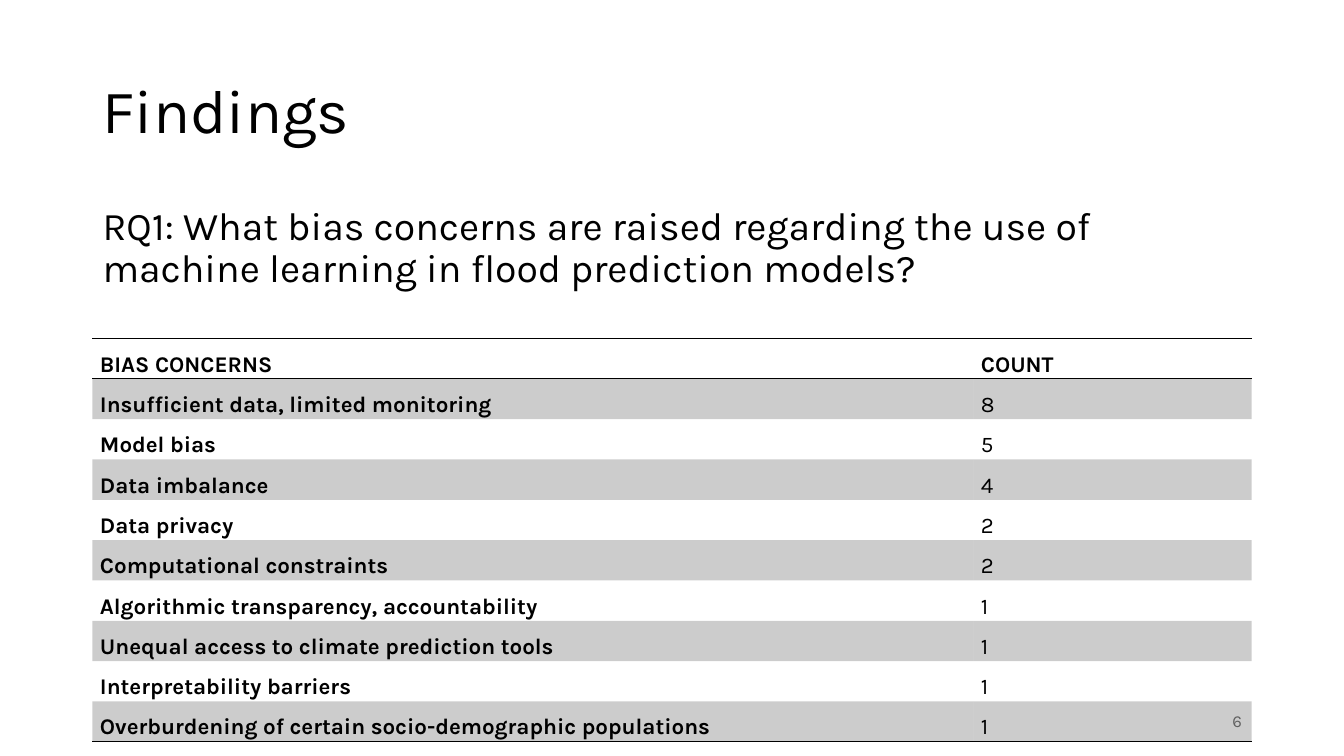
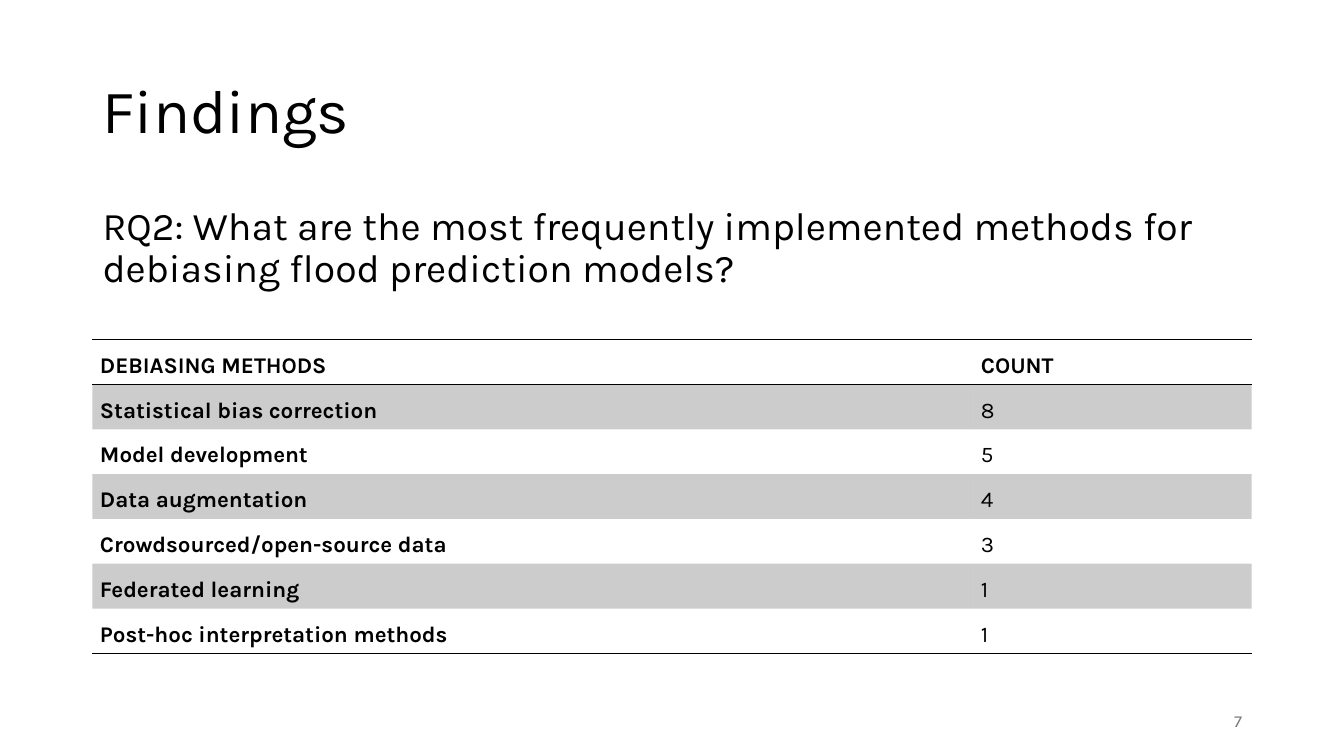
from lxml import etree
from pptx import Presentation
from pptx.dml.color import RGBColor
from pptx.enum import text as t
from pptx.oxml.ns import qn
from pptx.util import Cm, Pt

BLACK = RGBColor(0x00, 0x00, 0x00)
GREY = RGBColor(0x79, 0x79, 0x79)
FONT = "Karla"
NO_STYLE = "{2D5ABB26-0587-4C30-8999-92F81FD0307C}"
BAND_ALPHA = "20000"

LEFT, WIDTH = Cm(2.33), Cm(29.21)
CONCERN_WIDTH = Cm(22.2)

# number, question, question height, table top, row height, rows
FINDINGS = [
    (6, "RQ1: What bias concerns are raised regarding the use of machine learning "
        "in flood prediction models?", Cm(3.68), Cm(8.53), Cm(0.99), [
            ("BIAS CONCERNS", "COUNT"),
            ("Insufficient data, limited monitoring", "8"),
            ("Model bias", "5"),
            ("Data imbalance", "4"),
            ("Data privacy", "2"),
            ("Computational constraints", "2"),
            ("Algorithmic transparency, accountability", "1"),
            ("Unequal access to climate prediction tools", "1"),
            ("Interpretability barriers", "1"),
            ("Overburdening of certain socio-demographic populations", "1"),
        ]),
    (7, "RQ2: What are the most frequently implemented methods for debiasing "
        "flood prediction models?", Cm(4.45), Cm(8.56), Cm(1.13), [
            ("DEBIASING METHODS", "COUNT"),
            ("Statistical bias correction", "8"),
            ("Model development", "5"),
            ("Data augmentation", "4"),
            ("Crowdsourced/open-source data", "3"),
            ("Federated learning", "1"),
            ("Post-hoc interpretation methods", "1"),
        ]),
]


def write(frame, wording, size, color=BLACK, bold=False, spacing=1.0,
          align=t.PP_ALIGN.LEFT, anchor=t.MSO_ANCHOR.TOP):
    """Put one formatted paragraph in a text frame and return it."""
    frame.text = wording
    frame.word_wrap = True
    frame.vertical_anchor = anchor
    paragraph = frame.paragraphs[0]
    paragraph.alignment = align
    paragraph.line_spacing = spacing
    font = paragraph.runs[0].font
    font.name, font.size, font.bold = FONT, Pt(size), bold
    font.color.rgb = color
    return paragraph


def add_rule(cell, edge):
    """Draw a 1 pt black border; edge is lnT or lnB."""
    line = etree.SubElement(cell._tc.get_or_add_tcPr(), qn("a:" + edge), w=str(Pt(1)))
    fill = etree.SubElement(line, qn("a:solidFill"))
    etree.SubElement(fill, qn("a:srgbClr"), val=str(BLACK))


prs = Presentation()
prs.slide_width, prs.slide_height = Cm(33.87), Cm(19.05)
layout = prs.slide_layouts[1]

for number, wording, question_height, table_top, row_height, rows in FINDINGS:
    slide = prs.slides.add_slide(layout)

    title = slide.shapes.title
    title.left, title.top, title.width, title.height = LEFT, Cm(1.01), WIDTH, Cm(3.68)
    write(title.text_frame, "Findings", 44, spacing=0.9, anchor=t.MSO_ANCHOR.MIDDLE)

    question = slide.placeholders[1]
    question.left, question.top = LEFT, Cm(5.08)
    question.width, question.height = WIDTH, question_height
    paragraph = write(question.text_frame, wording, 28, spacing=0.9)
    paragraph.space_before = Pt(10)
    properties = paragraph._p.get_or_add_pPr()
    properties.set("marL", "0")
    properties.set("indent", "0")
    etree.SubElement(properties, qn("a:buNone"))

    for placeholder in (title, question):
        placeholder.text_frame.auto_size = t.MSO_AUTO_SIZE.NONE

    page = slide.shapes.add_textbox(Cm(23.93), Cm(17.65), Cm(7.62), Cm(1.01))
    write(page.text_frame, str(number), 12, GREY,
          align=t.PP_ALIGN.RIGHT, anchor=t.MSO_ANCHOR.MIDDLE)

    counts = slide.shapes.add_table(len(rows), 2, LEFT, table_top, WIDTH,
                                    row_height * len(rows)).table
    counts._tbl.tblPr.find(qn("a:tableStyleId")).text = NO_STYLE
    counts.columns[0].width = CONCERN_WIDTH
    counts.columns[1].width = WIDTH - CONCERN_WIDTH

    for r, row in enumerate(rows):
        counts.rows[r].height = row_height
        for c, entry in enumerate(row):
            cell = counts.cell(r, c)
            cell.margin_left = cell.margin_right = Cm(0.19)
            cell.margin_top = cell.margin_bottom = 0
            write(cell.text_frame, entry, 16, bold=r == 0 or c == 0, spacing=1.5)
            if r == 0:
                add_rule(cell, "lnT")
            if r in (0, len(rows) - 1):
                add_rule(cell, "lnB")
            if r % 2:
                cell.fill.solid()
                cell.fill.fore_color.rgb = BLACK
                shade = cell._tc.tcPr.find(qn("a:solidFill")).find(qn("a:srgbClr"))
                etree.SubElement(shade, qn("a:alpha"), val=BAND_ALPHA)
            else:
                cell.fill.background()

prs.save("out.pptx")
